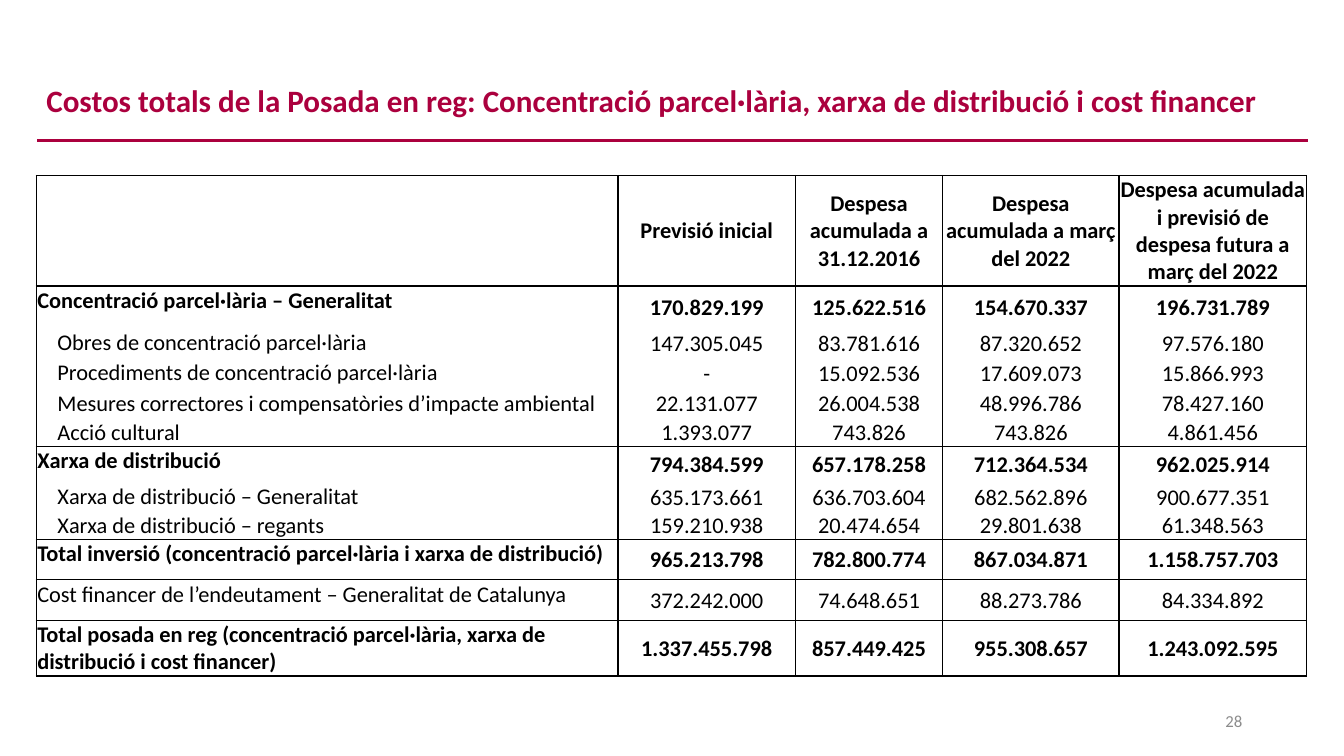
from lxml import etree
from pptx import Presentation
from pptx.dml.color import RGBColor
from pptx.enum.shapes import MSO_CONNECTOR
from pptx.enum.text import MSO_ANCHOR as Anchor, MSO_AUTO_SIZE as AutoSize, PP_ALIGN as Align
from pptx.oxml.ns import qn
from pptx.util import Inches, Pt

CRIMSON = RGBColor(0xAB, 0x00, 0x3E)
BLACK = RGBColor(0x00, 0x00, 0x00)
GREY = RGBColor(0x8C, 0x8C, 0x8C)
WHITE = RGBColor(0xFF, 0xFF, 0xFF)
FONT = "Calibri"

TITLE = ("Costos totals de la Posada en reg: Concentració parcel·lària, "
         "xarxa de distribució i cost financer")
HEADINGS = ["", "Previsió inicial", "Despesa acumulada a 31.12.2016",
            "Despesa acumulada a març del 2022",
            "Despesa acumulada i previsió de despesa futura a març del 2022"]
COLUMN_WIDTHS = [5.77, 1.76, 1.46, 1.75, 1.86]
HEADING_HEIGHT = 1.02

# Each group is ruled off as a block; each line is (style, height, label, amounts)
COST_GROUPS = [
    [("total", 0.42, "Concentració parcel·lària – Generalitat",
      "170.829.199 125.622.516 154.670.337 196.731.789"),
     ("detail", 0.3, "Obres de concentració parcel·lària",
      "147.305.045 83.781.616 87.320.652 97.576.180"),
     ("detail", 0.3, "Procediments de concentració parcel·lària",
      "- 15.092.536 17.609.073 15.866.993"),
     ("detail", 0.29, "Mesures correctores i compensatòries d’impacte ambiental",
      "22.131.077 26.004.538 48.996.786 78.427.160"),
     ("detail", 0.25, "Acció cultural",
      "1.393.077 743.826 743.826 4.861.456")],
    [("total", 0.36, "Xarxa de distribució",
      "794.384.599 657.178.258 712.364.534 962.025.914"),
     ("detail", 0.26, "Xarxa de distribució – Generalitat",
      "635.173.661 636.703.604 682.562.896 900.677.351"),
     ("detail", 0.28, "Xarxa de distribució – regants",
      "159.210.938 20.474.654 29.801.638 61.348.563")],
    [("total", 0.4, "Total inversió (concentració parcel·lària i xarxa de distribució)",
      "965.213.798 782.800.774 867.034.871 1.158.757.703")],
    [("plain", 0.4, "Cost financer de l’endeutament – Generalitat de Catalunya",
      "372.242.000 74.648.651 88.273.786 84.334.892")],
    [("total", 0.4, "Total posada en reg (concentració parcel·lària, xarxa de "
      "distribució i cost financer)",
      "1.337.455.798 857.449.425 955.308.657 1.243.092.595")],
]


def write(frame, text, size, color, align, bold=False):
    paragraph = frame.paragraphs[0]
    paragraph.alignment = align
    run = paragraph.add_run()
    run.text = text
    font = run.font
    font.name, font.size, font.bold = FONT, Pt(size), bold
    font.color.rgb = color
    return paragraph


def add_heading(slide, left, top, width, height):
    title = slide.shapes.title
    title.left, title.top = Inches(left), Inches(top)
    title.width, title.height = Inches(width), Inches(height)
    frame = title.text_frame
    frame.word_wrap = True
    frame.auto_size = AutoSize.NONE
    frame.vertical_anchor = Anchor.MIDDLE
    write(frame, TITLE, 22.2, CRIMSON, Align.LEFT, True).line_spacing = 0.9

    # Rule under the title
    rule_y = Inches(top + height + 0.05)
    rule = slide.shapes.add_connector(MSO_CONNECTOR.STRAIGHT, Inches(left + 0.01), rule_y,
                                      Inches(left + width + 0.01), rule_y)
    rule.line.color.rgb = CRIMSON
    rule.line.width = Pt(2.25)
    etree.SubElement(rule._element.spPr, qn("a:effectLst"))


def set_borders(cell, sides):
    """Draw black 1 pt borders on the given sides and none on the others."""
    properties = cell._tc.get_or_add_tcPr()
    for side in "LRTB":
        border = etree.SubElement(properties, qn(f"a:ln{side}"), w=str(Pt(1)))
        if side in sides:
            fill = etree.SubElement(border, qn("a:solidFill"))
            etree.SubElement(fill, qn("a:srgbClr"), val=str(BLACK))
        else:
            etree.SubElement(border, qn("a:noFill"))


def fill_row(row, texts, style, sides):
    for column, (cell, text) in enumerate(zip(row.cells, texts)):
        set_borders(cell, sides)
        cell.fill.solid()
        cell.fill.fore_color.rgb = WHITE
        cell.margin_left = cell.margin_right = cell.margin_top = Inches(0.01)
        cell.margin_bottom = 0
        cell.vertical_anchor = Anchor.MIDDLE if column else Anchor.TOP
        if not text:
            continue
        paragraph = write(cell.text_frame, text, 16, BLACK,
                          Align.CENTER if column else Align.LEFT, style == "total")
        if style == "detail" and column == 0:
            paragraph._p.get_or_add_pPr().set("marL", str(Inches(0.2)))


def add_cost_table(slide, left, top, width, height):
    row_count = 1 + sum(len(group) for group in COST_GROUPS)
    costs = slide.shapes.add_table(row_count, len(HEADINGS), Inches(left), Inches(top),
                                   Inches(width), Inches(height)).table
    costs.first_row = costs.horz_banding = False
    for column, column_width in zip(costs.columns, COLUMN_WIDTHS):
        column.width = Inches(column_width)

    rows = iter(costs.rows)
    heading_row = next(rows)
    heading_row.height = Inches(HEADING_HEIGHT)
    fill_row(heading_row, HEADINGS, "total", "LRTB")

    for group in COST_GROUPS:
        for position, (style, row_height, label, amounts) in enumerate(group):
            row = next(rows)
            row.height = Inches(row_height)
            sides = "LR"
            if position == 0:
                sides += "T"
            if position == len(group) - 1:
                sides += "B"
            fill_row(row, [label, *amounts.split()], style, sides)


def add_page_number(slide, left, top, width, height):
    number = slide.shapes.add_textbox(Inches(left), Inches(top), Inches(width), Inches(height))
    frame = number.text_frame
    frame.word_wrap = True
    frame.vertical_anchor = Anchor.MIDDLE
    write(frame, "28", 12, GREY, Align.RIGHT)


def main():
    deck = Presentation()
    deck.slide_width, deck.slide_height = Inches(13.33), Inches(7.5)
    slide = deck.slides.add_slide(deck.slide_layouts.get_by_name("Title Only"))
    add_heading(slide, 0.36, 0.7, 12.6, 0.64)
    add_cost_table(slide, 0.36, 1.74, 12.6, 4.92)
    add_page_number(slide, 9.42, 6.95, 3, 0.4)
    deck.save("out.pptx")


if __name__ == "__main__":
    main()
